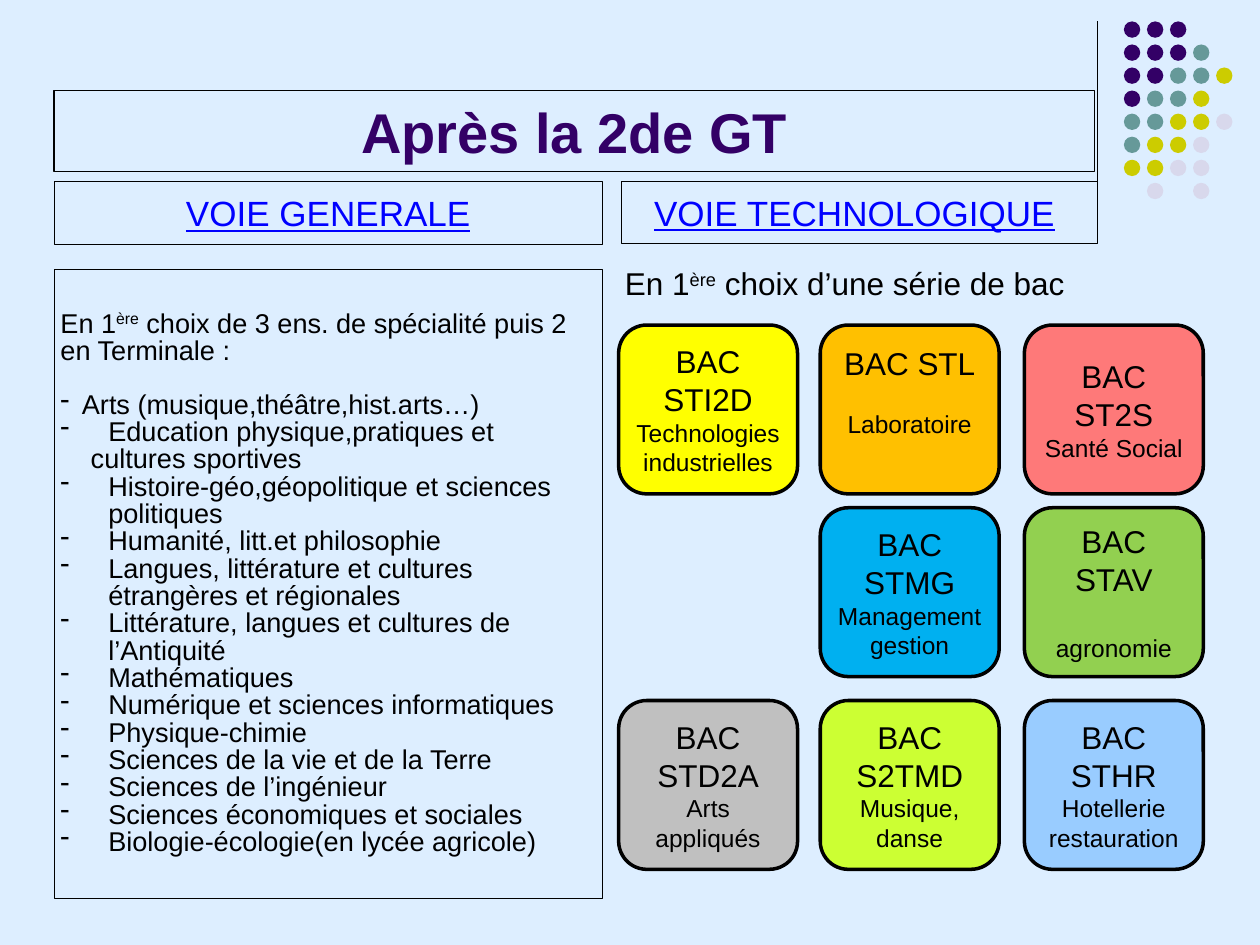
from dataclasses import dataclass

from lxml.etree import SubElement
from pptx import Presentation
from pptx.dml.color import RGBColor
from pptx.enum.shapes import MSO_CONNECTOR, MSO_SHAPE
from pptx.enum.text import MSO_ANCHOR, PP_ALIGN
from pptx.oxml.ns import qn
from pptx.util import Inches, Pt


@dataclass(frozen=True)
class Theme:
    font: str = "Arial"
    background: str = "DDEEFF"
    ink: str = "000000"
    title: str = "330066"
    link: str = "0000FF"
    title_size: float = 32
    heading_size: float = 20
    body_size: float = 18
    detail_size: float = 14
    list_size: float = 15.5
    thin: float = 0.75
    thick: float = 2


@dataclass(frozen=True)
class Box:
    left: float
    top: float
    width: float
    height: float

    def lengths(self):
        return [Inches(v) for v in (self.left, self.top, self.width, self.height)]


@dataclass(frozen=True)
class Run:
    text: str
    superscript: bool = False
    underline: bool = False


@dataclass(frozen=True)
class Card:
    column: int
    row: int
    series: str
    field: str
    fill: str
    gap: float = 0
    bottom_inset: float = 0.05


THEME = Theme()

DOT_COLORS = {"P": "330066", "T": "669999", "Y": "CCCC00", "L": "D8D8EC"}
DOT_ROWS = ("PPP", "PPPT", "PPTTY", "PTTY", "TTYYL", "TYYL", "YYLL", " L L")
DOT_LEFT, DOT_TOP, DOT_PITCH, DOT_SIZE = 8.92, 0.17, 0.183, 0.13

CARD_LEFTS = (4.91, 6.51, 8.13)
CARD_TOPS = (2.58, 4.03, 5.56)
CARDS = (
    Card(0, 0, "BAC STI2D", "Technologies industrielles", "FFFF00"),
    Card(1, 0, "BAC STL", "Laboratoire", "FFC000", gap=16, bottom_inset=0.34),
    Card(2, 0, "BAC ST2S", "Santé Social", "FE7979"),
    Card(1, 1, "BAC STMG", "Management gestion", "00B0F0"),
    Card(2, 1, "BAC STAV", "agronomie", "92D050", gap=20.5),
    Card(0, 2, "BAC STD2A", "Arts appliqués", "C0C0C0"),
    Card(1, 2, "BAC S2TMD", "Musique, danse", "CCFF33"),
    Card(2, 2, "BAC STHR", "Hotellerie restauration", "99CCFF"),
)

SPECIALITIES = (
    "Histoire-géo,géopolitique et sciences politiques",
    "Humanité, litt.et philosophie",
    "Langues, littérature et cultures étrangères et régionales",
    "Littérature, langues et cultures de l’Antiquité",
    "Mathématiques",
    "Numérique et sciences informatiques",
    "Physique-chimie",
    "Sciences de la vie et de la Terre",
    "Sciences de l’ingénieur",
    "Sciences économiques et sociales",
    "Biologie-écologie(en lycée agricole)",
)


def add_panel(slide, box: Box, kind=MSO_SHAPE.RECTANGLE, fill: str | None = None,
              line: str | None = THEME.ink, line_width: float = THEME.thin):
    panel = slide.shapes.add_shape(kind, *box.lengths())
    panel.shadow.inherit = False
    if fill:
        panel.fill.solid()
        panel.fill.fore_color.rgb = RGBColor.from_string(fill)
    else:
        panel.fill.background()
    if line:
        panel.line.color.rgb = RGBColor.from_string(line)
        panel.line.width = Pt(line_width)
    else:
        panel.line.fill.background()
    return panel


def set_frame(shape, anchor=MSO_ANCHOR.MIDDLE, bottom: float = 0.05) -> None:
    frame = shape.text_frame
    frame.word_wrap = True
    frame.vertical_anchor = anchor
    frame.margin_left = frame.margin_right = frame.margin_top = Inches(0.05)
    frame.margin_bottom = Inches(bottom)


def write(shape, *runs: Run | str, size: float, color: str = THEME.ink,
          bold: bool = False, align=PP_ALIGN.LEFT, spacing: float = 1.0,
          before: float = 0, indent: float = 0, bullet: str = "") -> None:
    """Add one paragraph; the indent hangs when there is a bullet."""
    frame = shape.text_frame
    paragraph = frame.paragraphs[0]
    if paragraph.runs:
        paragraph = frame.add_paragraph()
    paragraph.alignment = align
    paragraph.line_spacing = spacing
    paragraph.space_before = Pt(before)
    if indent:
        properties = paragraph._p.get_or_add_pPr()
        properties.set("marL", str(Inches(indent)))
        if bullet:
            properties.set("indent", str(-Inches(indent)))
            SubElement(properties, qn("a:buChar")).set("char", bullet)
    for part in runs:
        part = Run(part) if isinstance(part, str) else part
        run = paragraph.add_run()
        run.text = part.text
        run.font.name = THEME.font
        run.font.size = Pt(size)
        run.font.bold = bold
        run.font.underline = part.underline
        run.font.color.rgb = RGBColor.from_string(color)
        if part.superscript:
            run._r.get_or_add_rPr().set("baseline", "30000")


def draw_ornament(slide) -> None:
    divider = slide.shapes.add_connector(
        MSO_CONNECTOR.STRAIGHT, Inches(8.71), Inches(0.17), Inches(8.71), Inches(1.83))
    divider.line.color.rgb = RGBColor.from_string(THEME.ink)
    divider.line.width = Pt(THEME.thin)
    SubElement(divider._element.spPr, qn("a:effectLst"))
    for row, codes in enumerate(DOT_ROWS):
        for column, code in enumerate(codes):
            if code in DOT_COLORS:
                dot = Box(DOT_LEFT + column * DOT_PITCH, DOT_TOP + row * DOT_PITCH,
                          DOT_SIZE, DOT_SIZE)
                add_panel(slide, dot, MSO_SHAPE.OVAL, DOT_COLORS[code], line=None)


def draw_heading(slide, box: Box, *runs: Run | str, **text_format) -> None:
    heading = add_panel(slide, box)
    set_frame(heading)
    write(heading, *runs, align=PP_ALIGN.CENTER, **text_format)


def draw_specialities(slide) -> None:
    panel = add_panel(slide, Box(0.43, 2.14, 4.35, 4.99))
    set_frame(panel)
    line = {"size": THEME.list_size, "spacing": 0.84}
    item = {**line, "indent": 0.38, "bullet": "-"}
    write(panel, "En 1", Run("ère", superscript=True),
          " choix de 3 ens. de spécialité puis 2 en Terminale :", **line)
    write(panel, "Arts (musique,théâtre,hist.arts…)", before=15, indent=0.17,
          bullet="-", **line)
    write(panel, "Education physique,pratiques et", **item)
    write(panel, "cultures sportives", indent=0.24, **line)
    for speciality in SPECIALITIES:
        write(panel, speciality, **item)


def draw_card(slide, card: Card) -> None:
    box = Box(CARD_LEFTS[card.column], CARD_TOPS[card.row], 1.42, 1.34)
    panel = add_panel(slide, box, MSO_SHAPE.ROUNDED_RECTANGLE, card.fill,
                      line_width=THEME.thick)
    set_frame(panel, bottom=card.bottom_inset)
    write(panel, card.series, size=THEME.body_size, align=PP_ALIGN.CENTER)
    write(panel, card.field, size=THEME.detail_size, align=PP_ALIGN.CENTER, before=card.gap)


def main() -> None:
    deck = Presentation()
    deck.slide_width, deck.slide_height = Inches(10), Inches(7.5)
    slide = deck.slides.add_slide(deck.slide_layouts[6])
    slide.background.fill.solid()
    slide.background.fill.fore_color.rgb = RGBColor.from_string(THEME.background)

    draw_ornament(slide)
    draw_heading(slide, Box(0.43, 0.72, 8.26, 0.64), "Après la 2de GT",
                 size=THEME.title_size, color=THEME.title, bold=True)
    track = {"size": THEME.heading_size, "color": THEME.link}
    draw_heading(slide, Box(0.43, 1.44, 4.35, 0.5),
                 Run("VOIE GENERALE", underline=True), **track)
    draw_heading(slide, Box(4.93, 1.44, 3.78, 0.49),
                 Run("VOIE TECHNOLOGIQUE", underline=True), " ", **track)
    draw_specialities(slide)

    series_intro = slide.shapes.add_textbox(*Box(4.91, 2.05, 4.25, 0.4).lengths())
    set_frame(series_intro, anchor=MSO_ANCHOR.TOP)
    write(series_intro, "En 1", Run("ère", superscript=True),
          " choix d’une série de bac", size=THEME.body_size)
    for card in CARDS:
        draw_card(slide, card)
    deck.save("out.pptx")


if __name__ == "__main__":
    main()
